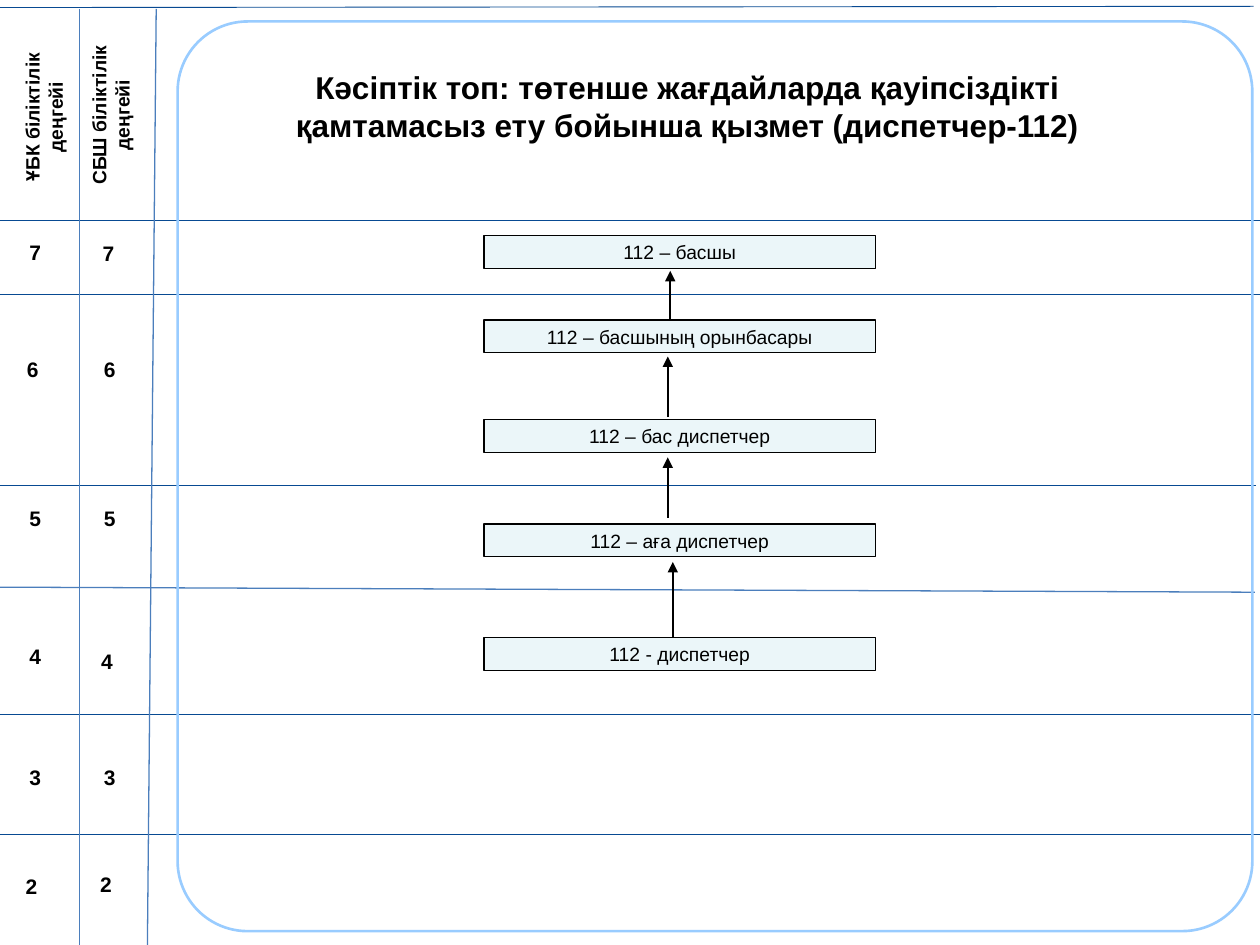
import dataclasses

import pptx
import pptx.dml.color
import pptx.enum.shapes
import pptx.enum.text
import pptx.oxml
import pptx.oxml.ns
import pptx.util

Inches = pptx.util.Inches
ROUNDED = pptx.enum.shapes.MSO_SHAPE.ROUNDED_RECTANGLE
STRAIGHT = pptx.enum.shapes.MSO_CONNECTOR.STRAIGHT


@dataclasses.dataclass(frozen=True)
class Theme:
    font: str = "Arial"
    text: str = "000000"
    box_fill: str = "EBF6F9"
    frame: str = "99CCFF"
    row_line: str = "084A92"
    column_line: str = "4B7EBC"
    title_size: int = 18
    level_size: int = 12
    label_size: int = 11


@dataclasses.dataclass(frozen=True)
class Box:
    left: float
    top: float
    width: float
    height: float

    def inner(self, x, y, width, height):
        return Box(self.left + x, self.top + y, width, height)

    def lengths(self):
        return [Inches(v) for v in dataclasses.astuple(self)]


THEME = Theme()

# Level number, then left and top of its mark in each of the two columns
LEVELS = [
    ("7", (0.09, 1.86), (0.67, 1.87)),
    ("6", (0.07, 2.79), (0.68, 2.79)),
    ("5", (0.09, 3.97), (0.68, 3.97)),
    ("4", (0.09, 5.07), (0.66, 5.11)),
    ("3", (0.09, 6.03), (0.68, 6.03)),
    ("2", (0.06, 6.89), (0.65, 6.88)),
]
HEADINGS = [
    ("ҰБК біліктілік деңгейі", (0.12, 0.1, 0.45, 1.66)),
    ("СБШ біліктілік деңгейі", (0.65, 0.1, 0.45, 1.63)),
]
# Start, end, colour and width of each grid line
GRID_LINES = [
    ((-0.03, 0.06), (9.95, 0.05), THEME.row_line, 0.5),
    ((-0.03, 3.85), (9.97, 3.85), THEME.row_line, 0.5),
    *[((0, y), (10, y), THEME.row_line, 0.5) for y in (1.75, 2.34, 5.67, 6.62)],
    ((-0.02, 4.66), (9.96, 4.7), THEME.column_line, 0.75),
    ((0.63, 0.07), (0.63, 7.53), THEME.column_line, 0.75),
    ((1.24, 0.07), (1.17, 7.52), THEME.column_line, 0.75),
]
# Job and its top within the ladder, highest first
JOBS = [
    ("112 – басшы", 0),
    ("112 – басшының орынбасары", 0.67),
    ("112 – бас диспетчер", 1.46),
    ("112 – аға диспетчер", 2.29),
    ("112 - диспетчер", 3.19),
]
# Position across the ladder, start and end of each step upwards
STEPS = [(1.48, 0.66, 0.28), (1.46, 1.44, 0.96), (1.46, 2.24, 1.76), (1.5, 3.19, 2.59)]


def rgb(value):
    return pptx.dml.color.RGBColor.from_string(value)


def apply(target, formats):
    for name, value in formats.items():
        setattr(target, name, value)


def write(tf, text, size, bold=False, **formats):
    apply(tf, {
        "word_wrap": True,
        "auto_size": pptx.enum.text.MSO_AUTO_SIZE.SHAPE_TO_FIT_TEXT,
        **formats,
    })
    p = tf.paragraphs[0]
    p.alignment = pptx.enum.text.PP_ALIGN.CENTER
    r = p.add_run()
    r.text = text
    apply(r.font, {"name": THEME.font, "size": pptx.util.Pt(size), "bold": bold})
    r.font.color.rgb = rgb(THEME.text)


def add_panel(slide, box, adjust=0, fill=None, line=None, width=0.75):
    sp = slide.shapes.add_shape(ROUNDED, *box.lengths())
    sp.shadow.inherit = False
    sp.adjustments[0] = adjust
    if fill:
        sp.fill.solid()
        sp.fill.fore_color.rgb = rgb(fill)
    else:
        sp.fill.background()
    if line:
        sp.line.color.rgb = rgb(line)
        sp.line.width = pptx.util.Pt(width)
    else:
        sp.line.fill.background()
    return sp


def add_label(slide, box, text, size, bold=False, **panel):
    sp = add_panel(slide, box, **panel)
    margins = {f"margin_{side}": Inches(0.04) for side in ("left", "top", "right", "bottom")}
    write(sp.text_frame, text, size, bold, **margins)
    return sp


def add_line(slide, box, start, end, color, width, arrow=False):
    ends = [Inches(v) for x, y in (start, end) for v in (box.left + x, box.top + y)]
    cx = slide.shapes.add_connector(STRAIGHT, *ends)
    cx.line.color.rgb = rgb(color)
    cx.line.width = pptx.util.Pt(width)
    if arrow:
        ln = cx.line._get_or_add_ln()
        ln.append(pptx.oxml.parse_xml(
            f'<a:tailEnd {pptx.oxml.ns.nsdecls("a")} type="triangle"/>'))
    cx.element.spPr.append(pptx.oxml.parse_xml(
        f'<a:effectLst {pptx.oxml.ns.nsdecls("a")}/>'))


def add_grid(slide, box):
    for start, end, color, width in GRID_LINES:
        add_line(slide, box, start, end, color, width)


def add_levels(slide, box):
    # Headings read upwards
    for text, place in HEADINGS:
        sp = add_label(slide, box.inner(*place), text, THEME.label_size, bold=True)
        sp.element.txBody.bodyPr.set("vert", "vert270")
    # Level numbers in both columns
    for number, *places in LEVELS:
        for x, y in places:
            add_label(slide, box.inner(x, y, 0.38, 0.28), number, THEME.level_size, bold=True)


def add_heading(slide, box):
    title = slide.shapes.title
    apply(title, dict(zip(("left", "top", "width", "height"), box.lengths())))
    write(title.text_frame,
          "Кәсіптік топ: төтенше жағдайларда қауіпсіздікті "
          "қамтамасыз ету бойынша қызмет (диспетчер-112)",
          THEME.title_size, bold=True,
          vertical_anchor=pptx.enum.text.MSO_ANCHOR.TOP)


def add_ladder(slide, box):
    for text, top in JOBS:
        add_label(slide, box.inner(0, top, box.width, 0.26), text, THEME.label_size,
                  fill=THEME.box_fill, line=THEME.text)
    for x, start, end in STEPS:
        add_line(slide, box, (x, start), (x, end), THEME.text, 1, arrow=True)


def main():
    prs = pptx.Presentation()
    apply(prs, {"slide_width": Inches(10), "slide_height": Inches(7.5)})
    slide = prs.slides.add_slide(prs.slide_layouts.get_by_name("Title Only"))

    page = Box(0, 0, 10, 7.5)
    frame = page.inner(1.41, 0.17, 8.53, 7.22)
    add_grid(slide, page)
    add_levels(slide, page)
    add_panel(slide, frame, adjust=0.077, line=THEME.frame, width=1.5)
    add_heading(slide, frame.inner(0.23, 0.32, 7.63, 0.71))
    add_ladder(slide, frame.inner(2.43, 1.7, 3.11, 3.45))

    prs.save("out.pptx")


if __name__ == "__main__":
    main()
